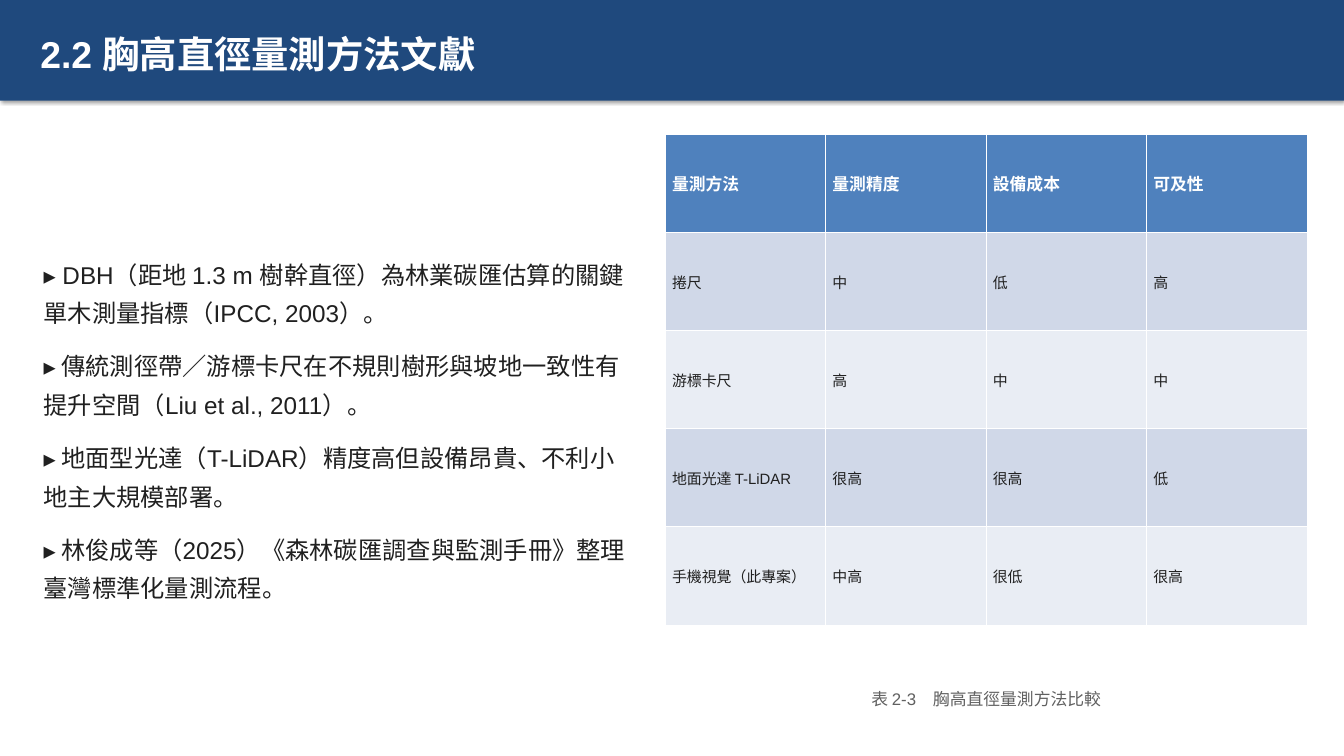
import pptx
import pptx.util
import pptx.dml.color
import pptx.enum.shapes
import pptx.enum.text
import pptx.oxml
import pptx.oxml.ns

RGBColor = pptx.dml.color.RGBColor
Align = pptx.enum.text.PP_ALIGN
Anchor = pptx.enum.text.MSO_ANCHOR

TITLE = "2.2 胸高直徑量測方法文獻"
POINTS = [
    "▸ DBH（距地 1.3 m 樹幹直徑）為林業碳匯估算的關鍵單木測量指標（IPCC, 2003）。",
    "▸ 傳統測徑帶／游標卡尺在不規則樹形與坡地一致性有提升空間（Liu et al., 2011）。",
    "▸ 地面型光達（T-LiDAR）精度高但設備昂貴、不利小地主大規模部署。",
    "▸ 林俊成等（2025）《森林碳匯調查與監測手冊》整理臺灣標準化量測流程。",
]
METHODS = [
    ("量測方法", "量測精度", "設備成本", "可及性"),
    ("捲尺", "中", "低", "高"),
    ("游標卡尺", "高", "中", "中"),
    ("地面光達 T-LiDAR", "很高", "很高", "低"),
    ("手機視覺（此專案）", "中高", "很低", "很高"),
]
CAPTION = "表 2-3　胸高直徑量測方法比較"

FONT = "Arial"
NAVY = RGBColor(0x1F, 0x49, 0x7D)
BLUE = RGBColor(0x4F, 0x81, 0xBD)
BANDS = [RGBColor(0xD0, 0xD8, 0xE8), RGBColor(0xE9, 0xED, 0xF4)]
WHITE = RGBColor(0xFF, 0xFF, 0xFF)
INK = RGBColor(0x20, 0x20, 0x20)
GRAY = RGBColor(0x60, 0x60, 0x60)

EMU_PER_PX = 9144
PAGE = (2000, 1125)
HEADER = (0, 0, 2000, 150)
HEADER_INSETS = (60, 15, 10, 5)
POINTS_AREA = (55, 170, 895, 930)
TABLE_AREA = (990, 200, 955, 730)
CAPTION_AREA = (990, 1020, 955, 60)

SHADOW = (
    '<a:outerShdw %s blurRad="39370" dist="22860" dir="5400000" rotWithShape="0">'
    '<a:srgbClr val="000000"><a:alpha val="35000"/></a:srgbClr></a:outerShdw>'
    % pptx.oxml.ns.nsdecls("a")
)


def px(*lengths):
    return [pptx.util.Emu(length * EMU_PER_PX) for length in lengths]


def write(frame, texts, size, color, bold=False, align=Align.LEFT, spacing=None, after=None):
    for index, text in enumerate(texts):
        para = frame.paragraphs[0] if index == 0 else frame.add_paragraph()
        para.alignment = align
        if spacing:
            para.line_spacing = spacing
        if after:
            para.space_after = pptx.util.Pt(after)
        span = para.add_run()
        span.text = text
        span.font.name = FONT
        span.font.size = pptx.util.Pt(size)
        span.font.bold = bold
        span.font.color.rgb = color


def add_header(page):
    bar = page.shapes.add_shape(pptx.enum.shapes.MSO_SHAPE.RECTANGLE, *px(*HEADER))
    bar.fill.solid()
    bar.fill.fore_color.rgb = NAVY
    bar.line.fill.background()
    bar.shadow.inherit = False
    effects = bar.element.spPr.find(pptx.oxml.ns.qn("a:effectLst"))
    effects.append(pptx.oxml.parse_xml(SHADOW))
    frame = bar.text_frame
    frame.margin_left, frame.margin_top, frame.margin_right, frame.margin_bottom = px(*HEADER_INSETS)
    frame.vertical_anchor = Anchor.MIDDLE
    write(frame, [TITLE], size=40, color=WHITE, bold=True)


def add_text(page, area, texts, anchor=Anchor.TOP, **style):
    frame = page.shapes.add_textbox(*px(*area)).text_frame
    frame.word_wrap = True
    frame.auto_size = pptx.enum.text.MSO_AUTO_SIZE.SHAPE_TO_FIT_TEXT
    frame.vertical_anchor = anchor
    write(frame, texts, **style)


def add_methods(page):
    table = page.shapes.add_table(len(METHODS), len(METHODS[0]), *px(*TABLE_AREA)).table
    for row, values in enumerate(METHODS):
        heading = row == 0
        for column, value in enumerate(values):
            cell = table.cell(row, column)
            cell.fill.solid()
            cell.fill.fore_color.rgb = BLUE if heading else BANDS[(row - 1) % 2]
            cell.vertical_anchor = Anchor.MIDDLE
            write(cell.text_frame, [value], size=18 if heading else 16,
                  color=WHITE if heading else INK, bold=heading)


def main():
    deck = pptx.Presentation()
    deck.slide_width, deck.slide_height = px(*PAGE)
    page = deck.slides.add_slide(deck.slide_layouts[6])
    add_header(page)
    add_text(page, POINTS_AREA, POINTS, anchor=Anchor.MIDDLE,
             size=26, color=INK, spacing=1.32, after=16)
    add_methods(page)
    add_text(page, CAPTION_AREA, [CAPTION], size=18, color=GRAY, align=Align.CENTER)
    deck.save("out.pptx")


if __name__ == "__main__":
    main()
